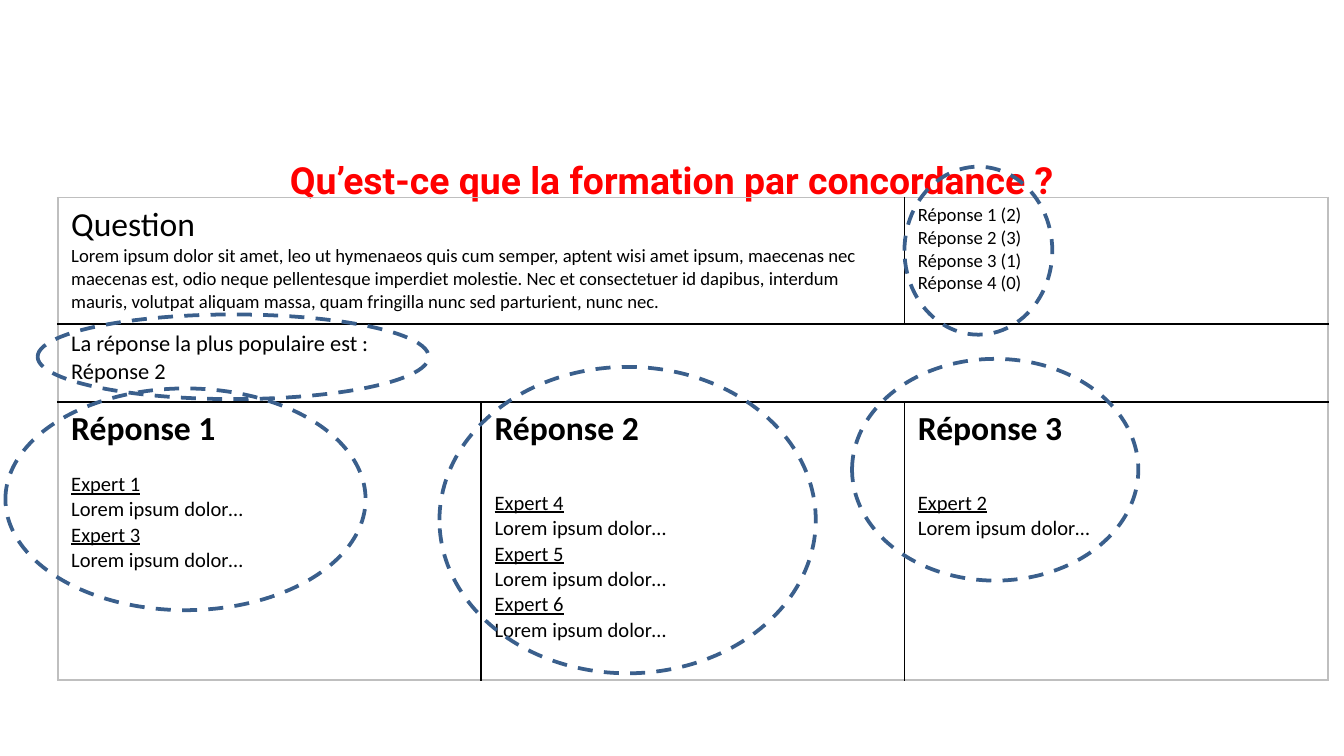
from lxml import etree
from pptx import Presentation
from pptx import util as u
from pptx.dml.color import RGBColor
from pptx.enum import dml, shapes, text
from pptx.oxml import ns

COLORS = {"title": "FF0000", "text": "000000", "ring": "3A5F8C",
          "inner": "000000", "outer": "BFBFBF"}
SLIDE_WIDTH = 10
SLIDE_HEIGHT = SLIDE_WIDTH * 9 / 16
COLUMN_WIDTH = 3.15
ROW_HEIGHTS = [0.94, 0.58, 2.07]
LOREM = "Lorem ipsum dolor…"
QUESTION = (
    "Lorem ipsum dolor sit amet, leo ut hymenaeos quis cum semper, aptent wisi "
    "amet ipsum, maecenas nec maecenas est, odio neque pellentesque imperdiet "
    "molestie. Nec et consectetuer id dapibus, interdum mauris, volutpat aliquam "
    "massa, quam fringilla nunc sed parturient, nunc nec.")
VOTES = [2, 3, 1, 0]
# Experts behind each answer, and the gap in points under its heading
ANSWERS = [([1, 3], 12), ([4, 5, 6], 22), ([2], 22)]
RINGS = [
    (6.73, 1.24, 1.1, 1.25),
    (0.28, 2.34, 2.91, 0.63),
    (0.04, 2.89, 2.68, 1.65),
    (3.27, 2.73, 2.8, 2.28),
    (6.34, 2.67, 2.13, 1.65),
]


def rgb(key):
    return RGBColor.from_string(COLORS[key])


def write_lines(frame, lines):
    """Write one paragraph per (wording, size, extra font values, gap after)."""
    for index, (wording, size, extra, gap) in enumerate(lines):
        paragraph = frame.paragraphs[0] if index == 0 else frame.add_paragraph()
        run = paragraph.add_run()
        run.text = wording
        font_values = {"name": "Calibri", "size": u.Pt(size), **extra}
        for attribute, value in font_values.items():
            setattr(run.font, attribute, value)
        run.font.color.rgb = rgb("text")
        if gap:
            paragraph.space_after = u.Pt(gap)


def add_title(slide, wording):
    title = slide.shapes.add_textbox(*map(u.Inches, (2, 1.09, 6, 0.46)))
    frame = title.text_frame
    frame.word_wrap = True
    frame.vertical_anchor = text.MSO_ANCHOR.BOTTOM
    paragraph = frame.paragraphs[0]
    paragraph.alignment = text.PP_ALIGN.CENTER
    run = paragraph.add_run()
    run.text = wording
    font_values = {"name": "Roboto", "size": u.Pt(20), "bold": True}
    for attribute, value in font_values.items():
        setattr(run.font, attribute, value)
    run.font.color.rgb = rgb("title")


def set_borders(cell, edges):
    """Draw the four sides of a cell; edges maps side to colour key."""
    properties = cell._tc.get_or_add_tcPr()
    for position, (side, key) in enumerate(edges.items()):
        line = etree.Element(ns.qn("a:ln" + side), w=str(u.Pt(1)))
        fill = etree.SubElement(line, ns.qn("a:solidFill"))
        etree.SubElement(fill, ns.qn("a:srgbClr"), val=COLORS[key])
        properties.insert(position, line)


def add_grid(slide):
    rows, columns = len(ROW_HEIGHTS), len(ANSWERS)
    frame = slide.shapes.add_table(
        rows, columns, u.Inches(0.43), u.Inches(1.47),
        u.Inches(COLUMN_WIDTH * columns), u.Inches(sum(ROW_HEIGHTS)))
    grid = frame.table
    for column in grid.columns:
        column.width = u.Inches(COLUMN_WIDTH)
    for row, height in zip(grid.rows, ROW_HEIGHTS):
        row.height = u.Inches(height)

    grid.cell(0, 0).merge(grid.cell(0, 1))
    grid.cell(1, 0).merge(grid.cell(1, 2))

    # Grey frame outside, black rules inside
    for r in range(rows):
        for c in range(columns):
            cell = grid.cell(r, c)
            cell.fill.background()
            last_column = c + (cell.span_width if cell.is_merge_origin else 1) - 1
            outside = {"L": c == 0, "R": last_column == columns - 1,
                       "T": r == 0, "B": r == rows - 1}
            set_borders(cell, {side: "outer" if is_outer else "inner"
                               for side, is_outer in outside.items()})
    return grid


def answer_lines(number, experts, gap):
    lines = [(f"Réponse {number}", 18, {"bold": True}, gap)]
    for expert in experts:
        lines.append((f"Expert {expert}", 11, {"underline": True}, 0))
        lines.append((LOREM, 11, {}, 0))
    return lines


def fill_grid(grid):
    # Question and votes
    write_lines(grid.cell(0, 0).text_frame,
                [("Question", 18, {}, 0), (QUESTION, 10, {}, 0)])
    write_lines(grid.cell(0, 2).text_frame,
                [(f"Réponse {number} ({count})", 10, {}, 0)
                 for number, count in enumerate(VOTES, 1)])
    # Most popular answer
    write_lines(grid.cell(1, 0).text_frame,
                [("La réponse la plus populaire est :", 12, {}, 0),
                 ("Réponse 2", 12, {}, 0)])
    # Experts by answer
    for column, (experts, gap) in enumerate(ANSWERS):
        write_lines(grid.cell(2, column).text_frame,
                    answer_lines(column + 1, experts, gap))


def add_ring(slide, bounds):
    ring = slide.shapes.add_shape(shapes.MSO_SHAPE.OVAL, *map(u.Inches, bounds))
    ring.shadow.inherit = False
    ring.fill.background()
    ring.line.color.rgb = rgb("ring")
    ring.line.width = u.Pt(2)
    ring.line.dash_style = dml.MSO_LINE.DASH


def main():
    deck = Presentation()
    deck.slide_width = u.Inches(SLIDE_WIDTH)
    deck.slide_height = u.Inches(SLIDE_HEIGHT)
    slide = deck.slides.add_slide(deck.slide_layouts[6])

    add_title(slide, "Qu’est-ce que la formation par concordance ?")
    fill_grid(add_grid(slide))
    for bounds in RINGS:
        add_ring(slide, bounds)

    deck.save("out.pptx")


if __name__ == "__main__":
    main()
